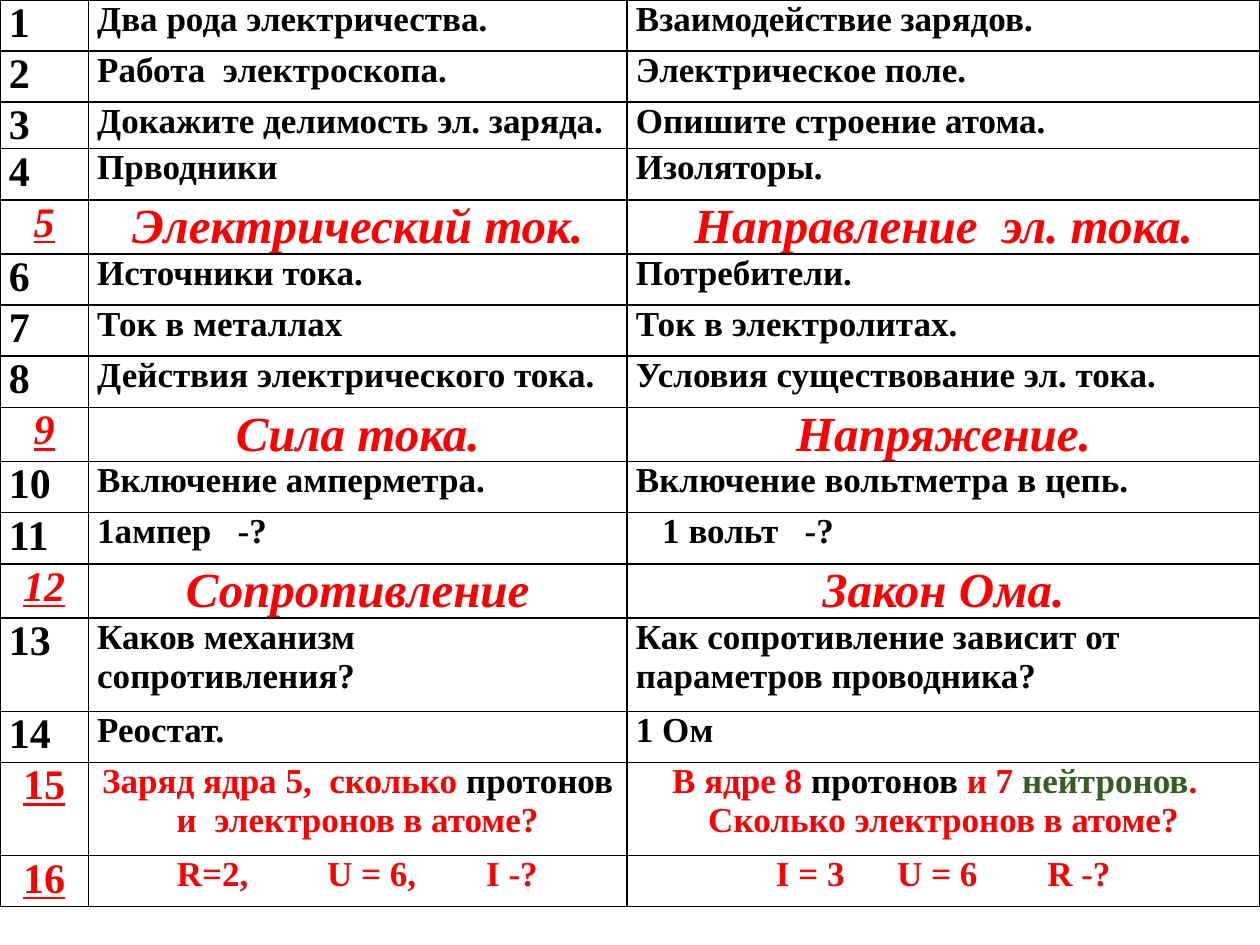
from dataclasses import dataclass

from lxml.etree import SubElement
from pptx import Presentation
from pptx.dml.color import RGBColor as RGB
from pptx.enum.text import PP_ALIGN as Align
from pptx.oxml.ns import qn
from pptx.util import Cm, Pt


@dataclass(frozen=True)
class Theme:
    font: str = "Times New Roman"
    black: str = "000000"
    red: str = "FF0000"
    green: str = "365D21"
    white: str = "FFFFFF"
    number: int = 24
    question: int = 20
    topic: int = 28
    border: float = 1


@dataclass(frozen=True)
class RowStyle:
    color: str
    size: int
    centered: bool = True
    italic: bool = False


THEME = Theme()
PLAIN = RowStyle(THEME.black, THEME.question, centered=False)
TOPIC = RowStyle(THEME.red, THEME.topic, italic=True)
TASK = RowStyle(THEME.red, THEME.question)

NORMAL, LOW, TALL = 1.03, 0.92, 1.88
COLUMNS = (1.78, 10.86, 12.76)
VOLT_ROW, VOLT_INDENT = 11, 0.53

# A cell is a string or a list of paragraphs; a paragraph is a string
# or a list of runs; a run is a string or a (text, colour) pair.
CHARGE_TASK = [["Заряд ядра 5,  сколько ", ("протонов", THEME.black),
                " и  электронов в атоме?"]]
NUCLEUS_TASK = [
    ["В ядре 8 ", ("протонов", THEME.black), " и 7 ",
     ("нейтронов", THEME.green), ".  "],
    "Сколько электронов в атоме?",
]
ROWS = [
    (PLAIN, NORMAL, "Два рода электричества.", "Взаимодействие зарядов."),
    (PLAIN, NORMAL, "Работа  электроскопа.", "Электрическое поле."),
    (PLAIN, LOW, "Докажите делимость эл. заряда.", "Опишите строение атома."),
    (PLAIN, NORMAL, "Прводники", "Изоляторы."),
    (TOPIC, NORMAL, "Электрический ток.", "Направление  эл. тока."),
    (PLAIN, NORMAL, "Источники тока.", "Потребители."),
    (PLAIN, NORMAL, "Ток в металлах", "Ток в электролитах."),
    (PLAIN, NORMAL, "Действия электрического тока.", "Условия существование эл. тока."),
    (TOPIC, NORMAL, "Сила тока.", "Напряжение."),
    (PLAIN, NORMAL, "Включение амперметра.", "Включение вольтметра в цепь."),
    (PLAIN, NORMAL, "1ампер   -?", "1 вольт   -?"),
    (TOPIC, NORMAL, "Сопротивление", "Закон Ома."),
    (PLAIN, TALL, "Каков механизм сопротивления?",
     "Как сопротивление зависит от параметров проводника?"),
    (PLAIN, NORMAL, "Реостат.", "1 Ом"),
    (TASK, TALL, CHARGE_TASK, NUCLEUS_TASK),
    (TASK, NORMAL, "R=2,         U = 6,        I -?", "I = 3      U = 6        R -?"),
]


def as_list(item):
    return item if isinstance(item, list) else [item]


class SlideBuilder:
    def __init__(self, slide, theme):
        self.slide, self.theme = slide, theme

    def table(self, rows, columns):
        heights = [Cm(row[1]) for row in rows]
        widths = [Cm(width) for width in columns]
        table = self.slide.shapes.add_table(
            len(rows), len(columns), 0, 0, sum(widths), sum(heights)).table
        table.first_row = table.horz_banding = False
        for column, width in zip(table.columns, widths):
            column.width = width
        for i, (style, _, left, right) in enumerate(rows):
            table.rows[i].height = heights[i]
            self.cell(table.cell(i, 0), str(i + 1), style, is_number=True)
            self.cell(table.cell(i, 1), left, style)
            self.cell(table.cell(i, 2), right, style)
        return table

    def cell(self, cell, content, style, is_number=False):
        cell.margin_left = cell.margin_right = Cm(0.18)
        cell.margin_top = cell.margin_bottom = 0
        self.borders(cell)
        cell.fill.solid()
        cell.fill.fore_color.rgb = RGB.from_string(self.theme.white)
        tf = cell.text_frame
        for i, runs in enumerate(as_list(content)):
            p = tf.add_paragraph() if i else tf.paragraphs[0]
            p.alignment = Align.CENTER if style.centered else Align.LEFT
            for item in as_list(runs):
                text, color = item if isinstance(item, tuple) else (item, style.color)
                self.run(p, text, color, style, is_number)

    def run(self, p, text, color, style, is_number):
        r = p.add_run()
        r.text = text
        font = r.font
        font.name, font.bold, font.italic = self.theme.font, True, style.italic
        font.size = Pt(self.theme.number if is_number else style.size)
        font.underline = is_number and style.centered
        font.color.rgb = RGB.from_string(color)

    def borders(self, cell):
        props = cell._tc.get_or_add_tcPr()
        for side in ("a:lnL", "a:lnR", "a:lnT", "a:lnB"):
            line = SubElement(props, qn(side), w=str(Pt(self.theme.border)))
            fill = SubElement(line, qn("a:solidFill"))
            SubElement(fill, qn("a:srgbClr"), val=self.theme.black)


def main():
    prs = Presentation()
    prs.slide_width, prs.slide_height = Cm(25.4), Cm(19.05)
    builder = SlideBuilder(prs.slides.add_slide(prs.slide_layouts[6]), THEME)
    table = builder.table(ROWS, COLUMNS)
    volt = table.cell(VOLT_ROW - 1, 2).text_frame.paragraphs[0]
    volt._p.get_or_add_pPr().set("marL", str(Cm(VOLT_INDENT)))
    prs.save("out.pptx")


if __name__ == "__main__":
    main()
